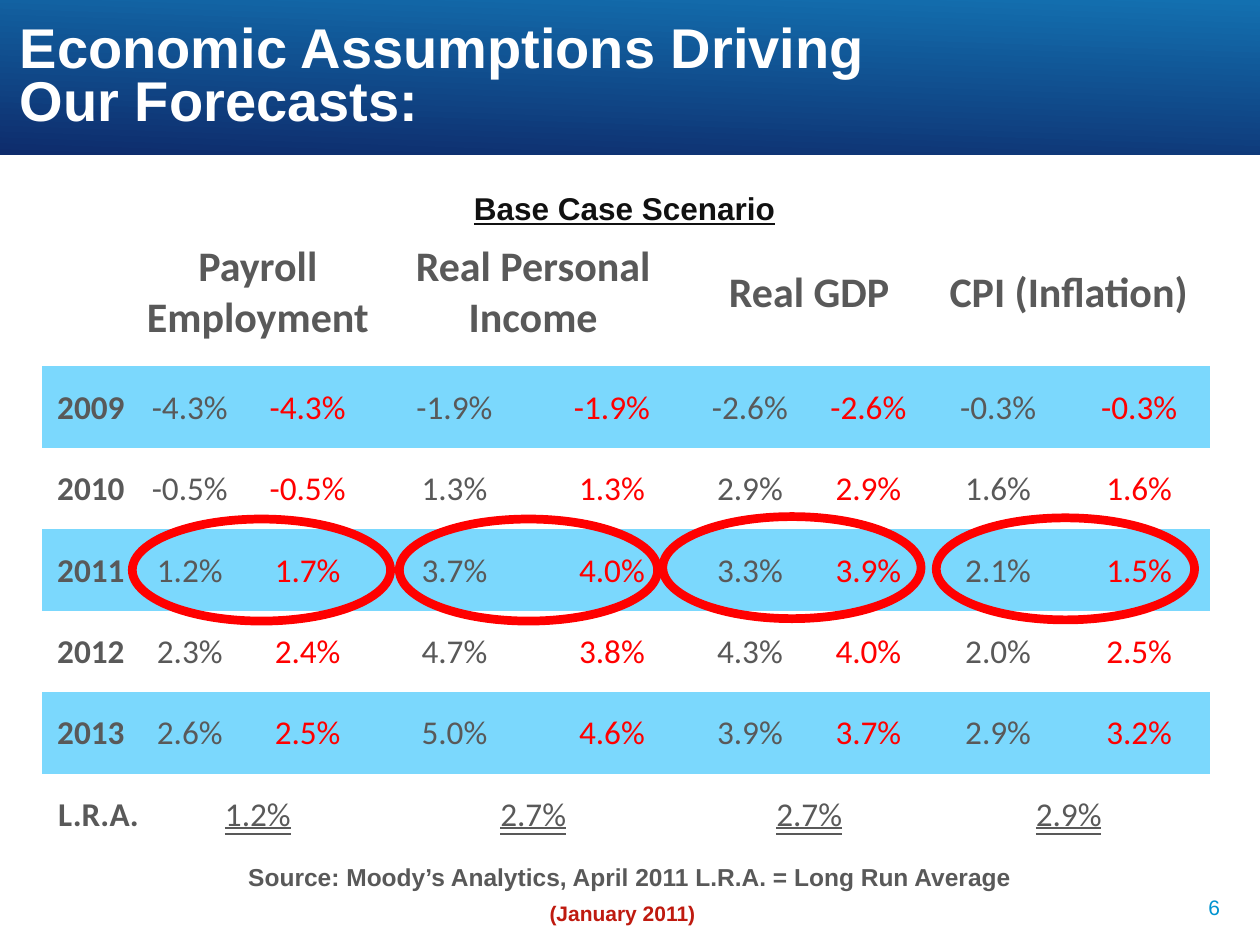
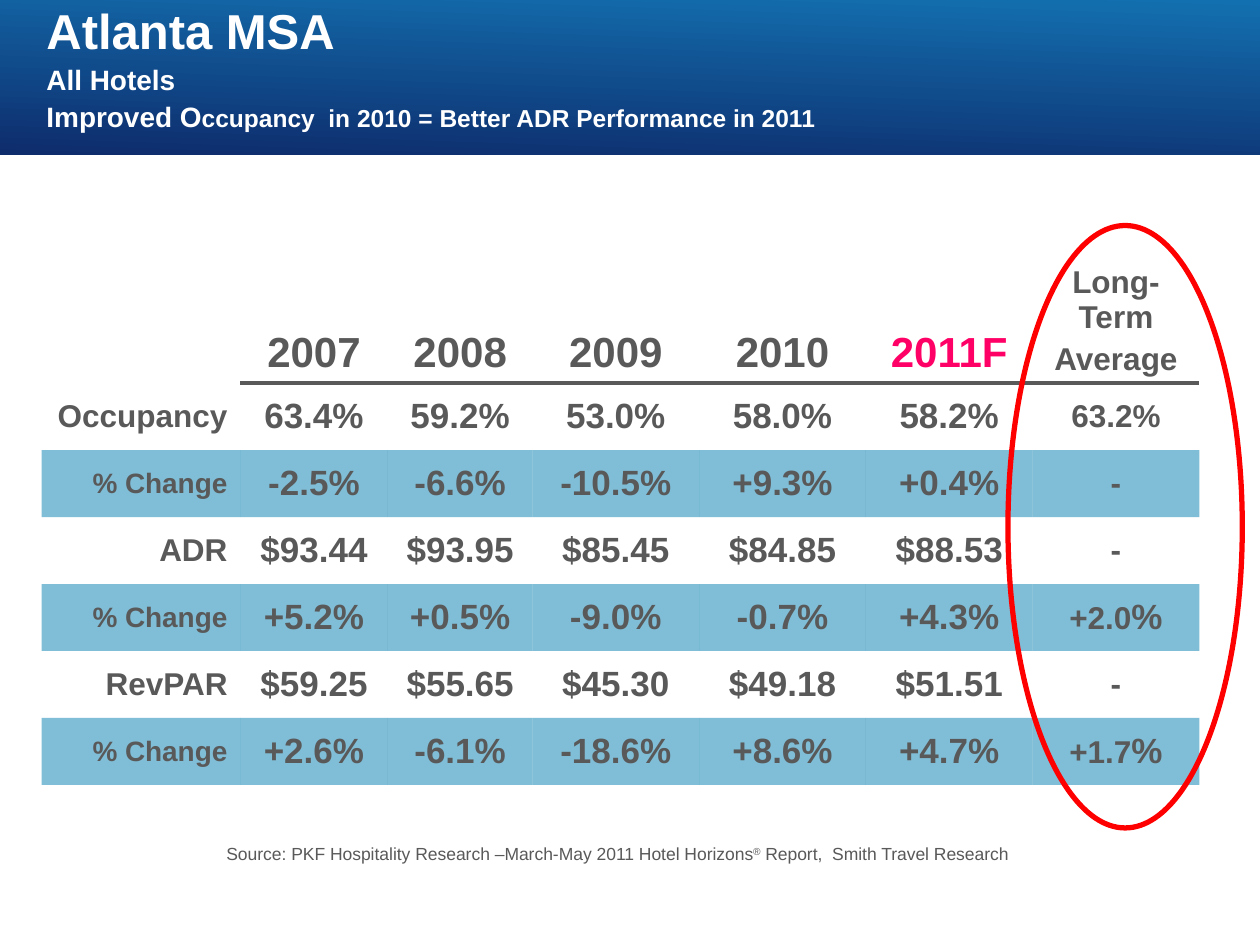
"""Builds two slides: the economic assumptions and the Atlanta hotel outlook."""
from dataclasses import dataclass

from lxml.etree import SubElement
from pptx import Presentation
from pptx.dml.color import RGBColor
from pptx.enum.shapes import MSO_SHAPE as Shape
from pptx.enum.text import MSO_ANCHOR as Anchor, MSO_UNDERLINE as Underline, PP_ALIGN as Align
from pptx.oxml import parse_xml
from pptx.oxml.ns import nsdecls, qn
from pptx.util import Pt

GREY, RED, WHITE, PINK = "595959", "FF0000", "FFFFFF", "FF0066"
BAND_DARK, BAND_LIGHT = "0E2C6C", "1370B0"
SKY, TEAL = "7BD8FD", "027DAE"
PLAIN_STYLE = "{2D5ABB26-0587-4C30-8999-92F81FD0307C}"
PLACE_TIGHT = (0.7, 0.7, 0.7, 0)
PLACE_NORMAL = (7.2, 3.6, 7.2, 3.6)
PLACE_SOURCE = (5, 2.9, 5, 2.9)

INDICATORS = [["Payroll", "Employment"], ["Real Personal Income"], ["Real GDP"], ["CPI (Inflation)"]]
FORECASTS = [
    ("2009", "-4.3%", "-4.3%", "-1.9%", "-1.9%", "-2.6%", "-2.6%", "-0.3%", "-0.3%"),
    ("2010", "-0.5%", "-0.5%", "1.3%", "1.3%", "2.9%", "2.9%", "1.6%", "1.6%"),
    ("2011", "1.2%", "1.7%", "3.7%", "4.0%", "3.3%", "3.9%", "2.1%", "1.5%"),
    ("2012", "2.3%", "2.4%", "4.7%", "3.8%", "4.3%", "4.0%", "2.0%", "2.5%"),
    ("2013", "2.6%", "2.5%", "5.0%", "4.6%", "3.9%", "3.7%", "2.9%", "3.2%"),
]
LONG_RUN = ["1.2%", "2.7%", "2.7%", "2.9%"]
FORECAST_WIDTHS = [56.2, 56.9, 77.8, 90, 90, 67.7, 67.7, 80.6, 80.6]
FORECAST_HEIGHTS = [84.8] + [46.56] * 6
HIGHLIGHTS = [(75.6, 296.6), (228.2, 296.6), (378.7, 295.2), (535, 295.9)]

YEARS = ["2007", "2008", "2009", "2010", "2011F"]
HOTELS = [
    ("Occupancy", "63.4%", "59.2%", "53.0%", "58.0%", "58.2%", "63.2%"),
    ("% Change", "-2.5%", "-6.6%", "-10.5%", "+9.3%", "+0.4%", "-"),
    ("ADR", "$93.44", "$93.95", "$85.45", "$84.85", "$88.53", "-"),
    ("% Change", "+5.2%", "+0.5%", "-9.0%", "-0.7%", "+4.3%", "+2.0%"),
    ("RevPAR", "$59.25", "$55.65", "$45.30", "$49.18", "$51.51", "-"),
    ("% Change", "+2.6%", "-6.1%", "-18.6%", "+8.6%", "+4.7%", "+1.7%"),
]
HOTEL_WIDTHS = [113.4, 84.5, 82.6, 95.3, 95.3, 95.3, 95.3]
HOTEL_HEIGHTS = [71] + [38.27] * 6


@dataclass
class Span:
    text: str
    size: float
    color: str = GREY
    bold: bool = True
    font: str = "Arial"
    underline: object = None
    raised: bool = False


def rgb(value):
    return RGBColor.from_string(value)


def write(frame, paragraphs, align=Align.LEFT, spacing=None, gap=0):
    for number, spans in enumerate(paragraphs):
        para = frame.add_paragraph() if number else frame.paragraphs[0]
        para.alignment = align
        if spacing:
            para.line_spacing = spacing
        if number and gap:
            para.space_before = Pt(gap)
        for span in spans:
            run = para.add_run()
            run.text = span.text
            font = run.font
            font.name, font.size, font.bold = span.font, Pt(span.size), span.bold
            font.underline = span.underline
            font.color.rgb = rgb(span.color)
            if span.raised:
                font._element.set("baseline", "30000")


def set_insets(target, insets):
    target.margin_left, target.margin_top, target.margin_right, target.margin_bottom = map(Pt, insets)


def add_text(slide, place, paragraphs, align=Align.CENTER, anchor=Anchor.TOP,
             insets=PLACE_NORMAL, spacing=None):
    frame = slide.shapes.add_textbox(*map(Pt, place)).text_frame
    frame.word_wrap = True
    frame.vertical_anchor = anchor
    set_insets(frame, insets)
    write(frame, paragraphs, align, spacing)


def add_slide(deck):
    slide = deck.slides.add_slide(deck.slide_layouts[6])
    band = slide.shapes.add_shape(Shape.RECTANGLE, 0, 0, Pt(720), Pt(88.6))
    band.shadow.inherit = False
    band.line.fill.background()
    band.fill.gradient()
    band.fill.gradient_angle = 88
    for stop, color, position in zip(band.fill.gradient_stops, (BAND_DARK, BAND_LIGHT), (0, 1)):
        stop.color.rgb = rgb(color)
        stop.position = position
    return slide


def add_ring(slide, place, weight):
    ring = slide.shapes.add_shape(Shape.OVAL, *map(Pt, place))
    ring.shadow.inherit = False
    ring.fill.background()
    ring.line.color.rgb = rgb(RED)
    ring.line.width = Pt(weight)


def add_grid(slide, left, top, widths, heights):
    frame = slide.shapes.add_table(len(heights), len(widths), Pt(left), Pt(top),
                                   Pt(sum(widths)), Pt(sum(heights)))
    table = frame.table
    table.first_row = table.horz_banding = False
    table._tbl.tblPr.find(qn("a:tableStyleId")).text = PLAIN_STYLE
    for column, width in zip(table.columns, widths):
        column.width = Pt(width)
    for row, height in zip(table.rows, heights):
        row.height = Pt(height)
    for cell in table.iter_cells():
        cell.fill.background()
    return table


def fill_cell(cell, paragraphs, align=Align.CENTER, anchor=Anchor.MIDDLE,
              insets=PLACE_NORMAL, gap=0):
    cell.vertical_anchor = anchor
    set_insets(cell, insets)
    write(cell.text_frame, paragraphs, align, gap=gap)


def shade(cell, color, alpha=100):
    cell.fill.solid()
    cell.fill.fore_color.rgb = rgb(color)
    if alpha < 100:
        tint = cell._tc.tcPr.find(qn("a:solidFill"))[0]
        SubElement(tint, qn("a:alpha")).set("val", str(alpha * 1000))


def rule_below(cell):
    line = parse_xml(f'<a:lnB {nsdecls("a")} w="{Pt(2.25)}"><a:solidFill>'
                     f'<a:srgbClr val="{GREY}"/></a:solidFill></a:lnB>')
    cell._tc.get_or_add_tcPr().insert(0, line)


def build_assumptions(deck):
    slide = add_slide(deck)
    title = ["Economic Assumptions Driving", "Our Forecasts:"]
    add_text(slide, (4.3, 12.2, 584, 64), [[Span(line, 32, WHITE)] for line in title],
             Align.LEFT, spacing=Pt(30))

    table = add_grid(slide, 23.8, 124.6, FORECAST_WIDTHS, FORECAST_HEIGHTS)
    last = len(FORECASTS) + 1
    for number, (heading, average) in enumerate(zip(INDICATORS, LONG_RUN)):
        column = 1 + 2 * number
        for row in (0, last):
            table.cell(row, column).merge(table.cell(row, column + 1))
        fill_cell(table.cell(0, column), [[Span(line, 24, font="Calibri")] for line in heading],
                  insets=PLACE_TIGHT)
        total = Span(average, 19, bold=False, font="Calibri", underline=Underline.DOUBLE_LINE)
        fill_cell(table.cell(last, column), [[total]], insets=PLACE_TIGHT)
    fill_cell(table.cell(last, 0), [[Span("L.R.A.", 19, font="Calibri")]], Align.RIGHT,
              insets=PLACE_TIGHT)
    for row, values in enumerate(FORECASTS, 1):
        for column, value in enumerate(values):
            cell = table.cell(row, column)
            earlier = column and column % 2 == 0
            span = Span(value, 19, RED if earlier else GREY, column == 0, "Calibri")
            fill_cell(cell, [[span]], insets=PLACE_TIGHT)
            if row % 2:
                shade(cell, SKY)

    source = "Source: Moody’s Analytics, April 2011 L.R.A. = Long Run Average"
    add_text(slide, (0, 489.6, 720, 22.3), [[Span(source, 14)]], insets=PLACE_SOURCE)
    add_text(slide, (250.6, 511.2, 210.2, 21.6), [[Span("(January 2011)", 12, "BF1A0F")]])
    add_text(slide, (669.6, 504, 34.6, 28.8), [[Span("6", 12, "0093D0", False)]],
             Align.RIGHT, Anchor.MIDDLE)
    for left, top in HIGHLIGHTS:
        add_ring(slide, (left, top, 147.6, 58.3), 5)
    add_text(slide, (149.8, 104.4, 414, 28.8),
             [[Span("Base Case Scenario", 18, "111111", underline=True)]])


def build_hotels(deck):
    slide = add_slide(deck)
    table = add_grid(slide, 23.8, 143.3, HOTEL_WIDTHS, HOTEL_HEIGHTS)
    headings = [[[Span(year, 24, PINK if year.endswith("F") else GREY)]] for year in YEARS]
    headings.append([[Span("Long-Term", 18)], [Span("Average", 18)]])
    for column, heading in enumerate(headings, 1):
        cell = table.cell(0, column)
        fill_cell(cell, heading, anchor=Anchor.BOTTOM, gap=3.6)
        rule_below(cell)
    for row, (label, *values, average) in enumerate(HOTELS, 1):
        change = row % 2 == 0
        fill_cell(table.cell(row, 0), [[Span(label, 16 if change else 18)]], Align.RIGHT)
        for column, value in enumerate(values, 1):
            fill_cell(table.cell(row, column), [[Span(value, 20)]])
        spans = [Span(average, 18)]
        if change and average.endswith("%"):
            spans = [Span(average[:-1], 18), Span("%", 20)]
        fill_cell(table.cell(row, len(values) + 1), [spans])
        if change:
            for column in range(len(HOTEL_WIDTHS)):
                shade(table.cell(row, column), TEAL, 50)

    title = [
        [Span("Atlanta MSA", 28, WHITE)],
        [Span("All Hotels", 16, WHITE)],
        [Span("Improved O", 16, WHITE),
         Span("ccupancy  in 2010 = Better ADR Performance in 2011", 14, WHITE)],
    ]
    add_text(slide, (26.6, 12.2, 584, 64), title, Align.LEFT, Anchor.BOTTOM, (0, 0, 0, 0), 1.1)
    add_ring(slide, (576, 128.9, 133.9, 344.2), 3)
    source = [
        Span("Source: PKF Hospitality Research –March-May 2011 Hotel Horizons", 10, bold=False),
        Span("®", 10, bold=False, raised=True),
        Span(" Report,  Smith Travel Research", 10, bold=False),
    ]
    add_text(slide, (31.7, 478.1, 642.2, 19.4), [source])


def main():
    deck = Presentation()
    deck.slide_width, deck.slide_height = Pt(720), Pt(540)
    build_assumptions(deck)
    build_hotels(deck)
    deck.save("out.pptx")


if __name__ == "__main__":
    main()
